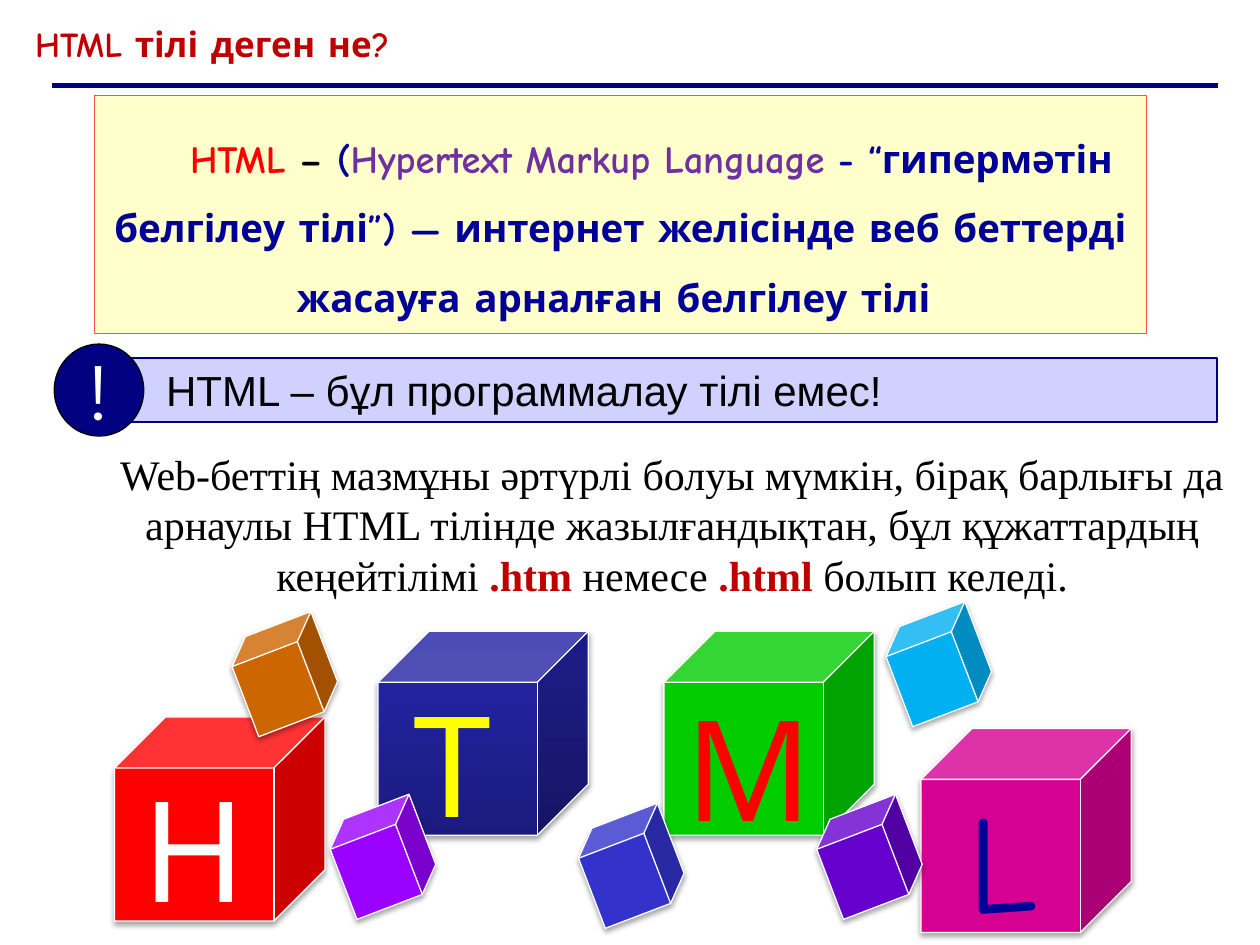
"""Build a slide that explains what the HTML language is."""
import copy
from dataclasses import dataclass

import pptx
import pptx.dml.color
import pptx.enum.shapes
import pptx.enum.text
import pptx.oxml
import pptx.oxml.ns
import pptx.util

Pt = pptx.util.Pt
RGBColor = pptx.dml.color.RGBColor
Shapes = pptx.enum.shapes.MSO_SHAPE
Align = pptx.enum.text.PP_ALIGN
Anchor = pptx.enum.text.MSO_ANCHOR
AutoSize = pptx.enum.text.MSO_AUTO_SIZE

WHITE = RGBColor(0xFF, 0xFF, 0xFF)
BLACK = RGBColor(0x00, 0x00, 0x00)
RED = RGBColor(0xFF, 0x00, 0x00)
DARK_RED = RGBColor(0xC0, 0x00, 0x00)
CORAL = RGBColor(0xFF, 0x50, 0x50)
CREAM = RGBColor(0xFF, 0xFF, 0xCC)
YELLOW = RGBColor(0xFF, 0xFF, 0x00)
GREEN = RGBColor(0x00, 0xCC, 0x00)
MAGENTA = RGBColor(0xD6, 0x00, 0x93)
PURPLE = RGBColor(0x70, 0x30, 0xA0)
VIOLET = RGBColor(0x99, 0x00, 0xFF)
INDIGO = RGBColor(0x66, 0x00, 0xCC)
BLUE = RGBColor(0x33, 0x33, 0xCC)
SKY = RGBColor(0x00, 0xB0, 0xF0)
ORANGE = RGBColor(0xCC, 0x66, 0x00)
NAVY = RGBColor(0x00, 0x00, 0x80)
INK = RGBColor(0x00, 0x00, 0x99)
LAVENDER = RGBColor(0xD1, 0xD1, 0xFF)
DEEP_BLUE = RGBColor(0x1B, 0x1B, 0x7E)
MID_BLUE = RGBColor(0x23, 0x23, 0xA3)
BRIGHT_BLUE = RGBColor(0x20, 0x20, 0xA6)

TITLE_FONT = "Comic Neue"
LETTER_CUBE_SIZE = (120.2, 116.6)
SMALL_CUBE_SIZE = (53.3, 56.2)
SMALL_CUBE_ROTATION = 339.1
NO_EFFECT = f'<a:effectLst {pptx.oxml.ns.nsdecls("a")}/>'
SHADOW = (
    f'<a:effectLst {pptx.oxml.ns.nsdecls("a")}>'
    '<a:outerShdw blurRad="39400" dist="22900" dir="5400000" rotWithShape="0">'
    '<a:srgbClr val="000000"><a:alpha val="35000"/></a:srgbClr>'
    "</a:outerShdw></a:effectLst>"
)


@dataclass(frozen=True)
class Box:
    left: float
    top: float
    width: float
    height: float

    def lengths(self) -> tuple:
        return Pt(self.left), Pt(self.top), Pt(self.width), Pt(self.height)


@dataclass(frozen=True)
class Span:
    text: str
    color: RGBColor
    bold: bool = False


@dataclass(frozen=True)
class LetterCube:
    left: float
    top: float
    fill: RGBColor
    letter: str
    letter_color: RGBColor
    letter_box: Box


@dataclass(frozen=True)
class SmallCube:
    left: float
    top: float
    fill: RGBColor


LETTER_CUBES = (
    LetterCube(65.5, 409.7, RED, "Н", WHITE, Box(74.2, 432, 76.3, 101.5)),
    LetterCube(216, 360.7, BRIGHT_BLUE, "Т", YELLOW, Box(229, 383.8, 69.1, 101.5)),
    LetterCube(379.4, 360.7, GREEN, "М", RED, Box(384.5, 385.9, 85.7, 101.5)),
    LetterCube(526.3, 416.2, MAGENTA, "L", INK, Box(545.8, 438.5, 59, 101.5)),
)
SMALL_CUBES = (
    SmallCube(192.2, 461.5, VIOLET),
    SmallCube(334.1, 466.6, BLUE),
    SmallCube(509.8, 351.4, SKY),
    SmallCube(136.1, 357.1, ORANGE),
    SmallCube(470.2, 461.5, INDIGO),
)


def write_text(shape, spans: list[Span], font: str, size: float,
               align=Align.LEFT, wrap: bool = True):
    frame = shape.text_frame
    frame.word_wrap = wrap
    paragraph = frame.paragraphs[0]
    paragraph.alignment = align
    paragraph.font.name = font
    paragraph.font.size = Pt(size)
    for span in spans:
        run = paragraph.add_run()
        run.text = span.text
        run.font.bold = span.bold
        run.font.color.rgb = span.color
    return paragraph


def add_text(slide, box: Box, spans: list[Span], font: str, size: float,
             align=Align.LEFT, wrap: bool = True):
    shape = slide.shapes.add_textbox(*box.lengths())
    shape.text_frame.auto_size = AutoSize.SHAPE_TO_FIT_TEXT
    return write_text(shape, spans, font, size, align, wrap)


def add_shape(slide, kind, box: Box, fill: RGBColor, line: RGBColor, weight: float = 0.75):
    shape = slide.shapes.add_shape(kind, *box.lengths())
    shape.shadow.inherit = False
    shape.fill.solid()
    shape.fill.fore_color.rgb = fill
    shape.line.color.rgb = line
    shape.line.width = Pt(weight)
    return shape


def add_cube(slide, box: Box, fill: RGBColor, rotation: float = 0):
    cube = add_shape(slide, Shapes.CUBE, box, fill, WHITE)
    cube.rotation = rotation
    properties = cube._element.spPr
    properties.remove(properties.find(pptx.oxml.ns.qn("a:effectLst")))
    properties.append(pptx.oxml.parse_xml(SHADOW))
    return cube


def shade_cube(cube) -> None:
    cube.fill.gradient()
    cube.fill.gradient_angle = 90
    stop_list = cube._element.spPr.find(".//" + pptx.oxml.ns.qn("a:gsLst"))
    stop_list.insert(1, copy.deepcopy(stop_list[0]))
    shades = ((0, DEEP_BLUE), (0.8, MID_BLUE), (1, BRIGHT_BLUE))
    for stop, (position, color) in zip(cube.fill.gradient_stops, shades):
        stop.position = position
        stop.color.rgb = color


def main() -> None:
    presentation = pptx.Presentation()
    presentation.slide_width, presentation.slide_height = Pt(720), Pt(540)
    slide = presentation.slides.add_slide(presentation.slide_layouts[6])

    add_text(slide, Box(13, 9.4, 661.7, 31.7),
             [Span("HTML тілі деген не?", DARK_RED, True)], TITLE_FONT, 20)

    add_shape(slide, Shapes.RECTANGLE, Box(54, 54.7, 601.2, 136.1), CREAM, CORAL)
    definition = add_text(slide, Box(54, 60.5, 601.2, 127.4), [
        Span("HTML", RED, True),
        Span(" – ", BLACK, True),
        Span("(", INK, True),
        Span("Hypertext Markup Language ", PURPLE, True),
        Span("- “гипермәтін белгілеу тілі”) — интернет желісінде веб беттерді "
             "жасауға арналған белгілеу тілі ", INK, True),
    ], TITLE_FONT, 22, Align.CENTER)
    definition.line_spacing = 1.5
    definition._p.get_or_add_pPr().set("indent", str(Pt(35.3)))

    for item in LETTER_CUBES:
        cube = add_cube(slide, Box(item.left, item.top, *LETTER_CUBE_SIZE), item.fill)
        if item.fill == BRIGHT_BLUE:
            shade_cube(cube)
        add_text(slide, item.letter_box, [Span(item.letter, item.letter_color)],
                 TITLE_FONT, 80, wrap=False)
    for item in SMALL_CUBES:
        add_cube(slide, Box(item.left, item.top, *SMALL_CUBE_SIZE), item.fill,
                 SMALL_CUBE_ROTATION)

    rule = slide.shapes.add_connector(pptx.enum.shapes.MSO_CONNECTOR.STRAIGHT,
                                      Pt(29.5), Pt(49), Pt(696.2), Pt(49))
    rule.line.color.rgb = NAVY
    rule.line.width = Pt(3)
    rule._element.spPr.append(pptx.oxml.parse_xml(NO_EFFECT))

    banner = add_shape(slide, Shapes.RECTANGLE, Box(67.7, 204.5, 627.8, 36.7), LAVENDER, NAVY, 1)
    banner.text_frame.margin_left = Pt(27.2)
    banner.text_frame.vertical_anchor = Anchor.TOP
    write_text(banner, [Span("HTML – бұл программалау тілі емес!", BLACK)], "Arial", 24)
    badge = add_shape(slide, Shapes.OVAL, Box(31, 196.6, 51.1, 52.6), NAVY, BLACK)
    badge.text_frame.vertical_anchor = Anchor.MIDDLE
    write_text(badge, [Span("!", WHITE)], "Montserrat", 44, Align.CENTER, False)

    add_text(slide, Box(48.2, 252.7, 671.8, 94.3), [
        Span("Web-беттің мазмұны әртүрлі болуы мүмкін, бірақ барлығы да арнаулы HTML "
             "тілінде жазылғандықтан, бұл құжаттардың кеңейтілімі ", BLACK),
        Span(".htm ", DARK_RED, True),
        Span("немесе ", BLACK),
        Span(".html ", DARK_RED, True),
        Span("болып келеді.", BLACK),
    ], "Times New Roman", 24, Align.CENTER)

    presentation.save("out.pptx")


if __name__ == "__main__":
    main()
